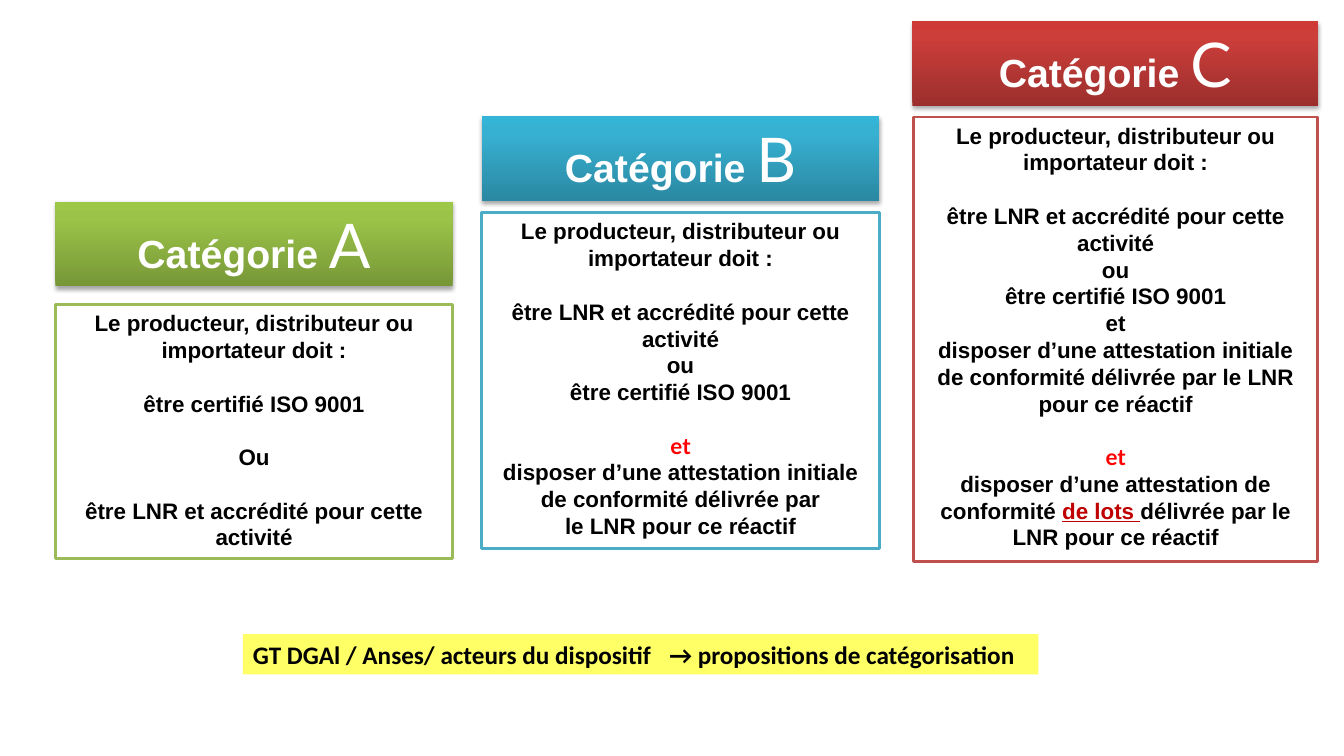
from copy import deepcopy

from lxml import etree
from pptx import Presentation
from pptx.dml.color import RGBColor
from pptx.enum.shapes import MSO_SHAPE
from pptx.enum.text import MSO_ANCHOR, PP_ALIGN
from pptx.oxml.ns import qn
from pptx.util import Inches, Pt

RECTANGLE = MSO_SHAPE.RECTANGLE
CENTER, LEFT = PP_ALIGN.CENTER, PP_ALIGN.LEFT
TOP = MSO_ANCHOR.TOP

BODY = {"name": "Arial", "size": 16, "bold": True, "color": "000000"}
RED_AND = {**BODY, "name": "Lato", "color": "FF0000"}
BATCH = {**BODY, "color": "C00000", "underline": True}
LABEL = {"name": "Arial", "size": 28, "bold": True, "color": "FFFFFF"}
LETTER = {"name": "Lato", "size": 44, "bold": False, "color": "FFFFFF"}
NOTE = {"name": "Calibri", "size": 18, "bold": True, "color": "000000"}

LINE_GAP = 19.15
INTRO = (0, [("Le producteur, distributeur ou importateur doit :", BODY)])
ACCREDITED = "être LNR et accrédité pour cette activité"
CERTIFIED = "être certifié ISO 9001"
INITIAL = "disposer d’une attestation initiale de conformité délivrée par"
CHOICE = [
    INTRO,
    (LINE_GAP, [(ACCREDITED, BODY)]),
    (0, [("ou", BODY)]),
    (0, [(CERTIFIED, BODY)]),
]

CATEGORIES = [
    {
        "letter": "A",
        "header": (0.55, 2, 3.94, 0.84),
        "box": (0.55, 3.02, 3.94, 2.52),
        "gradient": ("779737", "9BC348", "9DC746"),
        "border": "9BBB59",
        "rules": [
            INTRO,
            (LINE_GAP, [(CERTIFIED, BODY)]),
            (LINE_GAP, [("Ou", BODY)]),
            (LINE_GAP, [(ACCREDITED, BODY)]),
        ],
    },
    {
        "letter": "B",
        "header": (4.78, 1.15, 3.94, 0.84),
        "box": (4.78, 2.11, 3.94, 3.33),
        "gradient": ("2A88A2", "37B1D2", "34B4D6"),
        "border": "4BACC6",
        "rules": CHOICE + [
            (LINE_GAP, [("et", RED_AND)]),
            (0, [(INITIAL + "\nle LNR pour ce réactif", BODY)]),
        ],
    },
    {
        "letter": "C",
        "header": (9.05, 0.21, 4.02, 0.84),
        "box": (9.06, 1.16, 4.01, 4.41),
        "gradient": ("9C2F2D", "CB3E3A", "CE3B37"),
        "border": "C0504D",
        "rules": CHOICE + [
            (0, [("et", BODY)]),
            (0, [(INITIAL + " le LNR\npour ce réactif", BODY)]),
            (LINE_GAP, [("et", RED_AND)]),
            (0, [
                ("disposer d’une attestation de conformité ", BODY),
                ("de lots ", BATCH),
                ("délivrée par le LNR pour ce réactif", BODY),
            ]),
        ],
    },
]
PROPOSAL = "GT DGAl / Anses/ acteurs du dispositif\t→ propositions de catégorisation"
PROPOSAL_PLACE = (2.41, 6.29, 7.89, 0.4)
ARROW_TAB = 4.13
GRADIENT_POSITIONS = (0, 0.8, 1)


def rgb(value):
    return RGBColor.from_string(value)


def add_box(slide, place, fill=None, border=None):
    box = slide.shapes.add_shape(RECTANGLE, *map(Inches, place))
    box.shadow.inherit = False
    if fill:
        box.fill.solid()
        box.fill.fore_color.rgb = rgb(fill)
    if border:
        box.line.color.rgb = rgb(border)
        box.line.width = Pt(2)
    else:
        box.line.fill.background()
    box.text_frame.word_wrap = True
    box.text_frame.vertical_anchor = TOP
    return box


def add_run(paragraph, text, style):
    for index, part in enumerate(text.split("\n")):
        if index:
            paragraph.add_line_break()
        run = paragraph.add_run()
        run.text = part
        for key, value in style.items():
            if key == "color":
                run.font.color.rgb = rgb(value)
            else:
                setattr(run.font, key, Pt(value) if key == "size" else value)


def write(box, paragraphs, align=CENTER, line_gap=None):
    frame = box.text_frame
    for index, (gap, runs) in enumerate(paragraphs):
        paragraph = frame.add_paragraph() if index else frame.paragraphs[0]
        paragraph.alignment = align
        paragraph.space_before = Pt(gap)
        if line_gap:
            paragraph.line_spacing = Pt(line_gap)
        for text, style in runs:
            add_run(paragraph, text, style)


def shade(box, colors):
    box.fill.gradient()
    box.fill.gradient_angle = 90
    properties = box._element.spPr
    stops = properties.find(".//" + qn("a:gsLst"))
    stops.append(deepcopy(stops[-1]))
    for stop, position, color in zip(box.fill.gradient_stops, GRADIENT_POSITIONS, colors):
        stop.position = position
        stop.color.rgb = rgb(color)
    shadow = etree.SubElement(
        properties.find(qn("a:effectLst")), qn("a:outerShdw"),
        blurRad=str(Pt(3.1)), dist=str(Pt(1.8)), dir="5400000", rotWithShape="0")
    black = etree.SubElement(shadow, qn("a:srgbClr"), val="000000")
    etree.SubElement(black, qn("a:alpha"), val="35000")


def main():
    deck = Presentation()
    deck.slide_width, deck.slide_height = Inches(13.33), Inches(7.5)
    slide = deck.slides.add_slide(deck.slide_layouts[6])

    for category in CATEGORIES:
        header = add_box(slide, category["header"])
        shade(header, category["gradient"])
        write(header, [(0, [("Catégorie ", LABEL), (category["letter"], LETTER)])])
        rules = add_box(slide, category["box"], "FFFFFF", category["border"])
        write(rules, category["rules"], line_gap=LINE_GAP)

    proposal = add_box(slide, PROPOSAL_PLACE, "FFFF66")
    write(proposal, [(0, [(PROPOSAL, NOTE)])], LEFT)
    settings = proposal.text_frame.paragraphs[0]._p.get_or_add_pPr()
    tabs = etree.SubElement(settings, qn("a:tabLst"))
    etree.SubElement(tabs, qn("a:tab"), pos=str(Inches(ARROW_TAB)), algn="l")

    deck.save("out.pptx")


if __name__ == "__main__":
    main()
